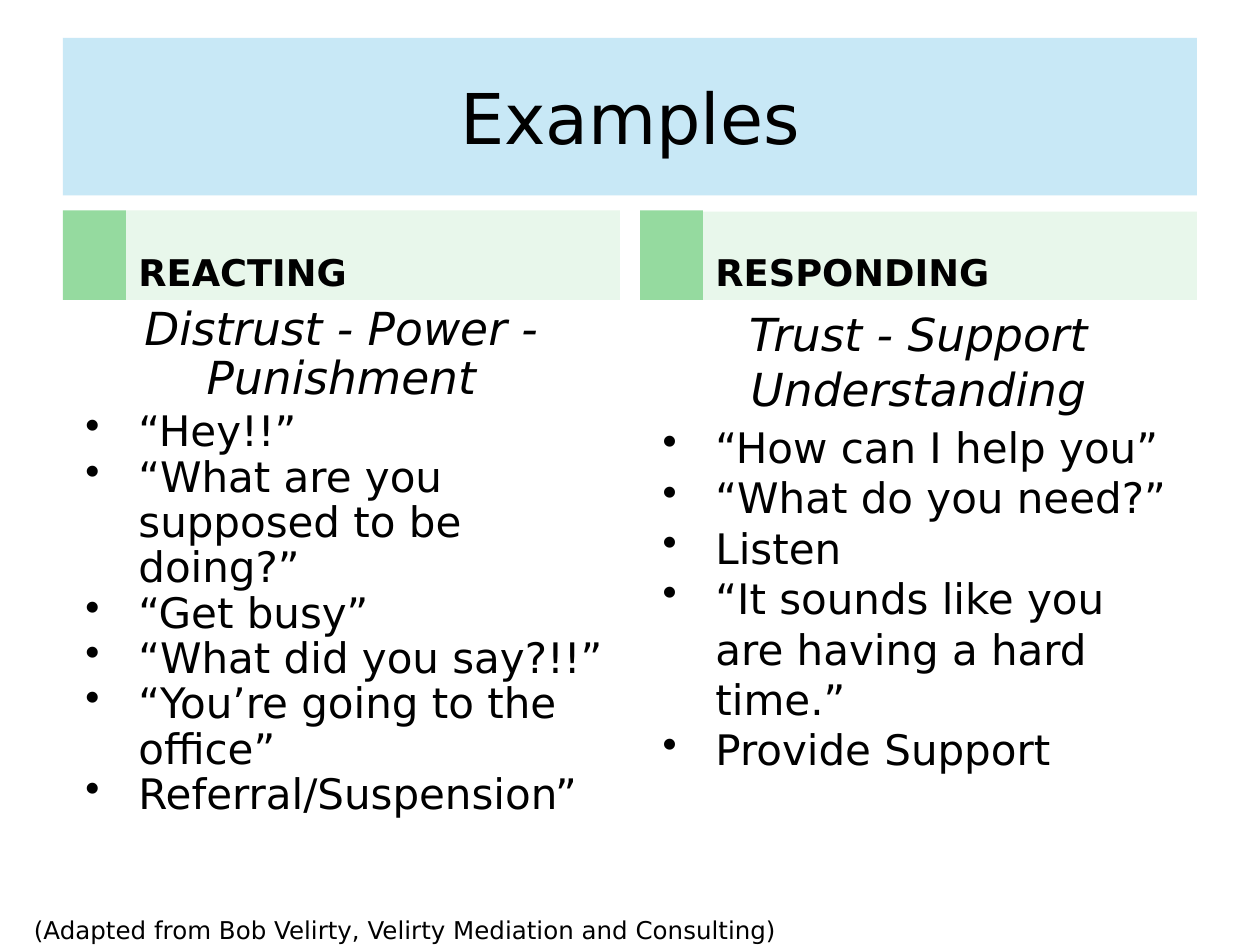
from lxml import etree
from pptx import Presentation
from pptx.dml.color import RGBColor
from pptx.enum.shapes import MSO_SHAPE
from pptx.enum.text import MSO_ANCHOR, PP_ALIGN
from pptx.oxml.ns import qn
from pptx.util import Emu, Pt

RECTANGLE = MSO_SHAPE.RECTANGLE
LEFT, CENTER = PP_ALIGN.LEFT, PP_ALIGN.CENTER
TOP, MIDDLE, BOTTOM = MSO_ANCHOR.TOP, MSO_ANCHOR.MIDDLE, MSO_ANCHOR.BOTTOM

EMU_PER_PX = 9144  # 100 px to the inch
FONT = "DejaVu Sans"
BLACK = RGBColor(0x00, 0x00, 0x00)
SKY = RGBColor(0xA9, 0xDC, 0xF2)
GREEN = RGBColor(0x95, 0xDA, 0x9F)
PALE_GREEN = RGBColor(0xE8, 0xF7, 0xEB)

COLUMN_TOP, COLUMN_WIDTH, COLUMN_HEIGHT = 167, 442, 503
HEADER_HEIGHT, MARKER_WIDTH = 71, 50
BULLET_MARGIN, BULLET_INDENT = 50, -42

COLUMNS = [
    dict(left=50, header_offset=0, line_spacing=0.9, heading="REACTING",
         theme="Distrust - Power - Punishment",
         examples=["“Hey!!”", "“What are you supposed to be doing?”",
                   "“Get busy”", "“What did you say?!!”",
                   "“You’re going to the office”", "Referral/Suspension”"]),
    dict(left=508, header_offset=1, line_spacing=1.0, heading="RESPONDING",
         theme="Trust - Support Understanding",
         examples=["“How can I help you”", "“What do you need?”", "Listen",
                   "“It sounds like you are having a hard time.”",
                   "Provide Support"]),
]


def px(value):
    return Emu(value * EMU_PER_PX)


def add_rectangle(slide, box, color, opacity=100):
    shape = slide.shapes.add_shape(RECTANGLE, *map(px, box))
    shape.shadow.inherit = False
    shape.fill.solid()
    shape.fill.fore_color.rgb = color
    shape.line.fill.background()
    if opacity < 100:
        color_element = shape.fill._xPr.find(".//" + qn("a:srgbClr"))
        etree.SubElement(color_element, qn("a:alpha"), val=str(opacity * 1000))
    return shape


def set_frame(shape, anchor=TOP, inset_x=10, inset_y=5):
    frame = shape.text_frame
    frame.word_wrap = True
    frame.vertical_anchor = anchor
    frame.margin_left = frame.margin_right = px(inset_x)
    frame.margin_top = frame.margin_bottom = px(inset_y)
    return frame


def write_text(paragraph, text, size, align=LEFT, bold=False, italic=False,
               space_before=0, line_spacing=1.0, bullet=False):
    paragraph.alignment = align
    paragraph.space_before = Pt(space_before)
    paragraph.line_spacing = line_spacing
    if bullet:
        properties = paragraph._p.get_or_add_pPr()
        properties.set("marL", str(px(BULLET_MARGIN)))
        properties.set("indent", str(px(BULLET_INDENT)))
        bullet_color = etree.SubElement(properties, qn("a:buClr"))
        etree.SubElement(bullet_color, qn("a:srgbClr"), val=str(BLACK))
        etree.SubElement(properties, qn("a:buChar"), char="•")
    run = paragraph.add_run()
    run.text = text
    font = run.font
    font.name, font.size, font.bold, font.italic = FONT, Pt(size), bold, italic
    font.color.rgb = BLACK


def add_title(slide, box, text):
    frame = set_frame(add_rectangle(slide, box, SKY, opacity=64), MIDDLE)
    write_text(frame.paragraphs[0], text, 40, align=CENTER)


def add_column(slide, box, heading, theme, examples, header_offset, line_spacing):
    left, top, width, height = box

    # Marker and heading band
    add_rectangle(slide, (left, top, MARKER_WIDTH, HEADER_HEIGHT), GREEN)
    band = add_rectangle(slide, (left + MARKER_WIDTH, top + header_offset,
                                 width - MARKER_WIDTH,
                                 HEADER_HEIGHT - header_offset), PALE_GREEN)
    write_text(set_frame(band, BOTTOM).paragraphs[0], heading, 21, bold=True,
               space_before=4.2)

    # Theme and bulleted examples
    body = slide.shapes.add_textbox(px(left), px(top + HEADER_HEIGHT),
                                    px(width), px(height - HEADER_HEIGHT))
    frame = set_frame(body)
    write_text(frame.paragraphs[0], theme, 26, align=CENTER, italic=True,
               space_before=3.6, line_spacing=line_spacing)
    for index, example in enumerate(examples):
        write_text(frame.add_paragraph(), example, 24, bullet=True,
                   space_before=0 if index else 3.6, line_spacing=line_spacing)


def add_credit(slide, box, text):
    frame = set_frame(slide.shapes.add_textbox(*map(px, box)), inset_y=10)
    write_text(frame.paragraphs[0], text, 14)


def main():
    presentation = Presentation()
    presentation.slide_width, presentation.slide_height = px(1000), px(750)
    slide = presentation.slides.add_slide(presentation.slide_layouts[6])

    add_title(slide, (50, 30, 900, 125), "Examples")
    for column in COLUMNS:
        content = {key: value for key, value in column.items() if key != "left"}
        add_column(slide, (column["left"], COLUMN_TOP, COLUMN_WIDTH, COLUMN_HEIGHT),
                   **content)
    add_credit(slide, (17, 716, 709, 44),
               "(Adapted from Bob Velirty, Velirty Mediation and Consulting)")

    presentation.save("out.pptx")


if __name__ == "__main__":
    main()
